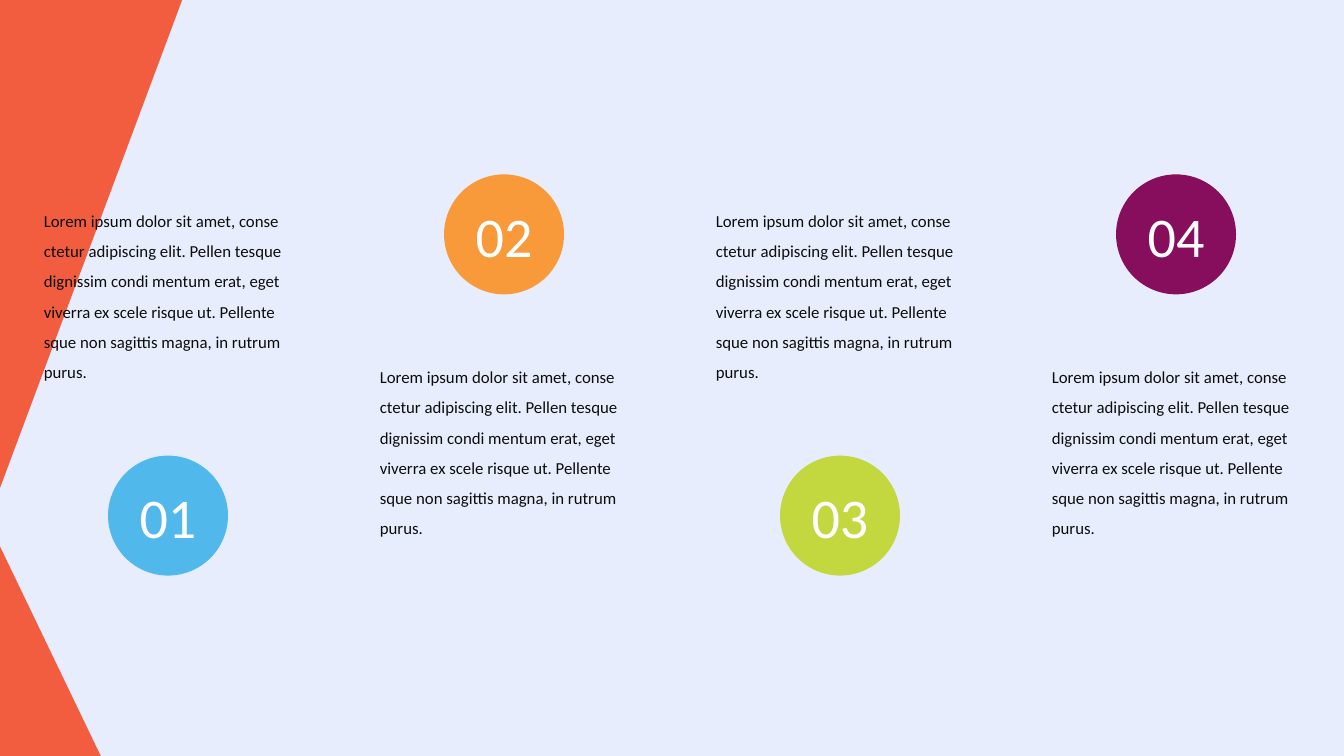
"""Build a four-step slide with numbered circles alternating with text."""
import pptx
import pptx.dml.color
import pptx.enum.shapes
import pptx.enum.text
import pptx.util

SHAPES = pptx.enum.shapes.MSO_SHAPE
ALIGN = pptx.enum.text.PP_ALIGN
COLORS = {
    "background": "E7EDFD", "corner": "F25D3F", "body": "0D0D0D", "number": "FFFFFF",
    "01": "51B8EB", "02": "F89A3A", "03": "C3D83F", "04": "870E5D",
}
BODY = (
    "Lorem ipsum dolor sit amet, conse ctetur adipiscing elit. Pellen tesque "
    "dignissim condi mentum erat, eget viverra ex scele risque ut. Pellente "
    "sque non sagittis magna, in rutrum purus."
)
WIDTH, HEIGHT = 13.33, 7.5
COLUMN = WIDTH / 4
CIRCLE = 1.19
BODY_WIDTH = 2.66

deck = pptx.Presentation()
deck.slide_width = pptx.util.Inches(WIDTH)
deck.slide_height = pptx.util.Inches(HEIGHT)
slide = deck.slides.add_slide(deck.slide_layouts[6])
slide.background.fill.solid()
slide.background.fill.fore_color.rgb = pptx.dml.color.RGBColor.from_string(COLORS["background"])


def add_solid(preset, color, *box):
    solid = slide.shapes.add_shape(preset, *map(pptx.util.Inches, box))
    solid.shadow.inherit = False
    solid.fill.solid()
    solid.fill.fore_color.rgb = pptx.dml.color.RGBColor.from_string(COLORS[color])
    solid.line.fill.background()
    return solid


def add_words(words, color, size, align, spacing, *box):
    frame = slide.shapes.add_textbox(*map(pptx.util.Inches, box)).text_frame
    frame.word_wrap = True
    frame.auto_size = pptx.enum.text.MSO_AUTO_SIZE.SHAPE_TO_FIT_TEXT
    frame.text = words
    paragraph = frame.paragraphs[0]
    paragraph.alignment = align
    paragraph.line_spacing = spacing
    font = paragraph.runs[0].font
    font.name = "Calibri"
    font.size = pptx.util.Pt(size)
    font.color.rgb = pptx.dml.color.RGBColor.from_string(COLORS[color])


add_solid(SHAPES.RIGHT_TRIANGLE, "corner", 0, HEIGHT - 2.08, 1, 2.08)
top_corner = add_solid(SHAPES.RIGHT_TRIANGLE, "corner", 0, -0.01, 1.81, 4.85)
top_corner.rotation = 180
top_corner._element.spPr.xfrm.set("flipH", "1")

for step, number in enumerate(["01", "02", "03", "04"]):
    center = (step + 0.5) * COLUMN
    circle_top, body_top = (1.73, 3.49) if step % 2 else (4.52, 1.94)
    circle_left = center - CIRCLE / 2
    add_solid(SHAPES.OVAL, number, circle_left, circle_top, CIRCLE, CIRCLE)
    add_words(number, "number", 40, ALIGN.CENTER, 1.0,
              circle_left, circle_top + 0.22, CIRCLE, 0.77)
    add_words(BODY, "body", 12, ALIGN.LEFT, 1.5,
              center - BODY_WIDTH / 2, body_top, BODY_WIDTH, 1.89)

deck.save("out.pptx")
